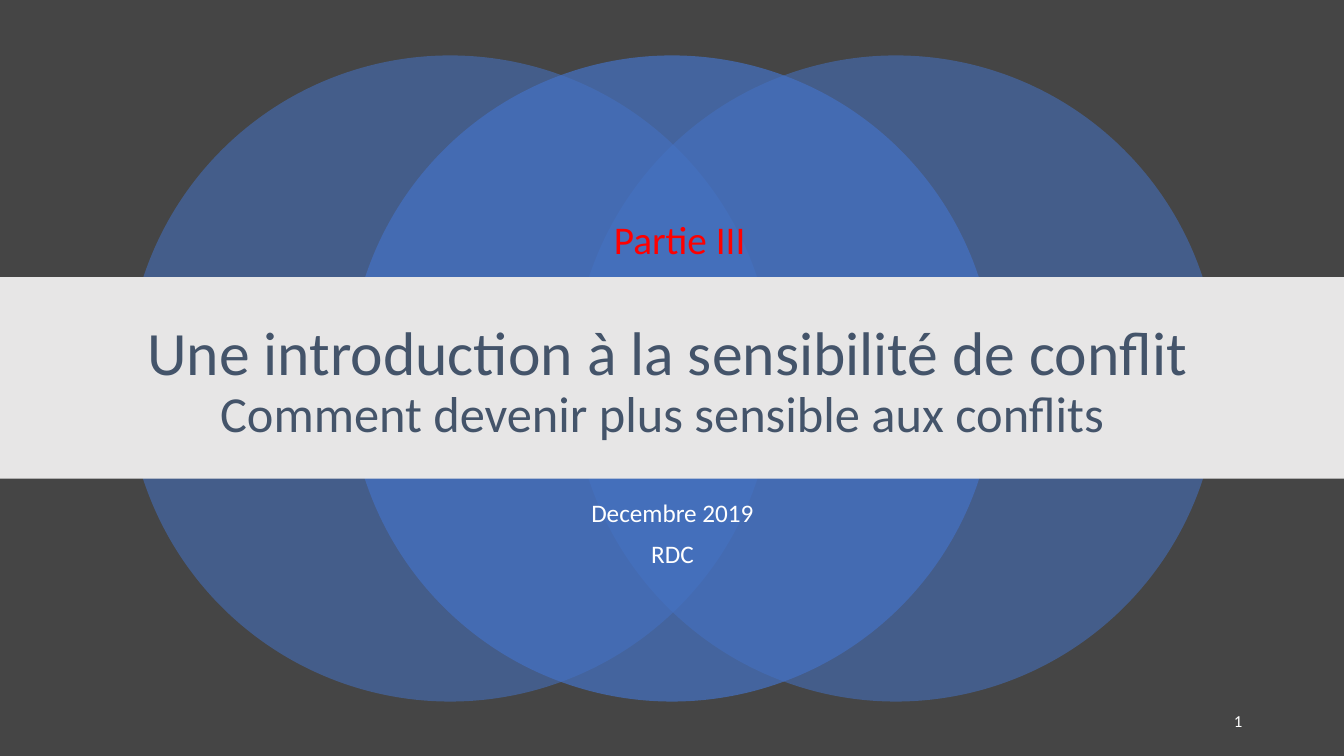
from lxml import etree
from pptx import Presentation
from pptx.dml.color import RGBColor
from pptx.enum.shapes import MSO_SHAPE
from pptx.enum.text import MSO_ANCHOR, PP_ALIGN
from pptx.oxml.ns import qn
from pptx.util import Inches, Pt

DARK = RGBColor(0x45, 0x45, 0x45)
BLUE = RGBColor(0x44, 0x72, 0xC4)
BAND = RGBColor(0xE7, 0xE6, 0xE6)
SLATE = RGBColor(0x44, 0x54, 0x6A)
WHITE = RGBColor(0xFF, 0xFF, 0xFF)
RED = RGBColor(0xFF, 0x00, 0x00)


def add_run(p, text, size, color):
    r = p.add_run()
    r.text = text
    r.font.name = "Calibri"
    r.font.size = Pt(size)
    r.font.color.rgb = color
    return r


def add_text_box(left, top, width, height):
    tf = s.shapes.add_textbox(Inches(left), Inches(top), Inches(width), Inches(height)).text_frame
    tf.word_wrap = True
    return tf


prs = Presentation()
prs.slide_width = Inches(13.33)
prs.slide_height = Inches(7.5)
s = prs.slides.add_slide(prs.slide_layouts[5])
s.background.fill.solid()
s.background.fill.fore_color.rgb = DARK

# Overlapping circles: the outer two first, the stronger middle one on top
circles = s.shapes.add_group_shape()
for left, opacity in [(1.26, 55), (5.68, 55), (3.46, 70)]:
    sp = circles.shapes.add_shape(
        MSO_SHAPE.OVAL, Inches(left), Inches(0.55), Inches(6.41), Inches(6.41))
    sp.shadow.inherit = False
    sp.fill.solid()
    sp.fill.fore_color.rgb = BLUE
    sp.line.fill.background()
    color = sp.element.spPr.find(qn("a:solidFill"))[0]
    etree.SubElement(color, qn("a:alpha")).set("val", str(opacity * 1000))

# Date and place
tf = add_text_box(1.67, 4.92, 10, 0.83)
for i, text in enumerate(["Decembre 2019", "RDC"]):
    p = tf.paragraphs[0] if i == 0 else tf.add_paragraph()
    p.alignment = PP_ALIGN.CENTER
    p.line_spacing = 0.9
    p.space_before = Pt(10)
    add_run(p, text, 18, WHITE)

# Title band, with the title brought in front of it
band = s.shapes.add_shape(MSO_SHAPE.RECTANGLE, 0, Inches(2.75), prs.slide_width, Inches(2))
band.shadow.inherit = False
band.fill.solid()
band.fill.fore_color.rgb = BAND
band.line.fill.background()

title = s.shapes.title
title.left, title.top = Inches(1.16), Inches(3.04)
title.width, title.height = Inches(10.93), Inches(1.51)
title.element.getparent().append(title.element)
tf = title.text_frame
tf.word_wrap = True
tf.vertical_anchor = MSO_ANCHOR.MIDDLE
p = tf.paragraphs[0]
p.alignment = PP_ALIGN.CENTER
p.line_spacing = 0.9
add_run(p, "Une introduction à la sensibilité de conflit", 44, SLATE)
p.add_line_break()
add_run(p, "Comment devenir plus sensible aux conflits ", 36, SLATE)

# Slide number as a live field
tf = add_text_box(9.42, 6.95, 3, 0.4)
tf.vertical_anchor = MSO_ANCHOR.MIDDLE
p = tf.paragraphs[0]
p.alignment = PP_ALIGN.RIGHT
p.space_after = Pt(6)
number = add_run(p, "1", 12, WHITE)._r
field = etree.Element(qn("a:fld"), id="{B6F15528-21DE-4FAA-801E-634DDDAF4B2B}", type="slidenum")
number.getparent().replace(number, field)
field.extend(list(number))

# Part label
tf = add_text_box(5.99, 2.09, 3.69, 0.57)
add_run(tf.paragraphs[0], "Partie III", 28, RED)

prs.save("out.pptx")
